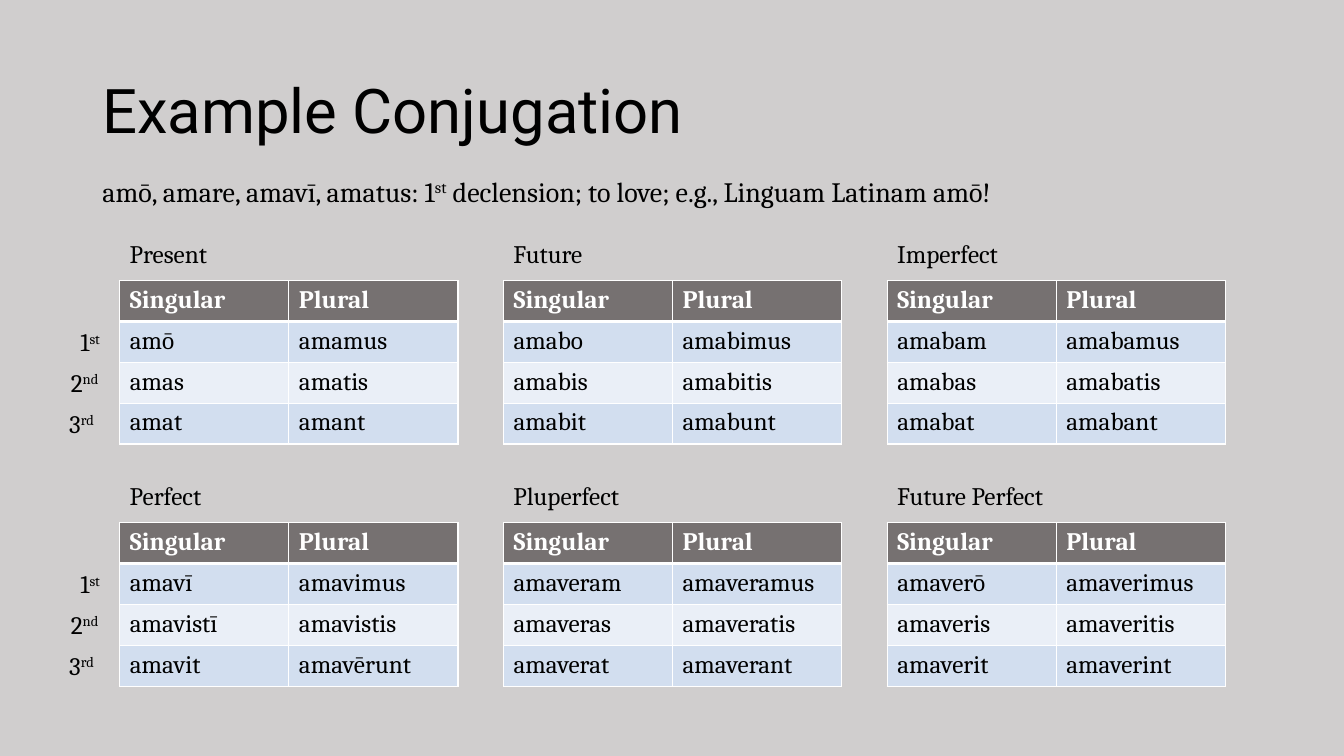
from lxml.etree import SubElement
from pptx import Presentation
from pptx.dml.color import RGBColor
from pptx.enum.shapes import MSO_SHAPE as Shape
from pptx.enum.text import MSO_ANCHOR as Anchor, MSO_AUTO_SIZE as AutoSize, PP_ALIGN as Align
from pptx.oxml.ns import qn
from pptx.util import Cm, Pt

BLACK = RGBColor(0x00, 0x00, 0x00)
WHITE = RGBColor(0xFF, 0xFF, 0xFF)
BACKDROP = RGBColor(0xD0, 0xCE, 0xCE)
HEADER = RGBColor(0x76, 0x71, 0x71)
BAND_DARK = RGBColor(0xD2, 0xDE, 0xEF)
BAND_LIGHT = RGBColor(0xEA, 0xEF, 0xF7)

PAGE_WIDTH, PAGE_HEIGHT = 33.87, 19.05
TABLE_LEFT, TABLE_TOP = 3.02, 7.07
COLUMN_PITCH, ROW_PITCH = 9.67, 6.1
CELL_WIDTH, CELL_HEIGHT = 4.26, 1.03
CAPTION_RISE = 1.18

HEADINGS = ("Singular", "Plural")
TENSES = [
    [
        ("Present", [("amō", "amamus"), ("amas", "amatis"), ("amat", "amant")]),
        ("Future", [("amabo", "amabimus"), ("amabis", "amabitis"), ("amabit", "amabunt")]),
        ("Imperfect", [("amabam", "amabamus"), ("amabas", "amabatis"), ("amabat", "amabant")]),
    ],
    [
        ("Perfect", [("amavī", "amavimus"), ("amavistī", "amavistis"), ("amavit", "amavērunt")]),
        ("Pluperfect", [("amaveram", "amaveramus"), ("amaveras", "amaveratis"),
                        ("amaverat", "amaverant")]),
        ("Future Perfect", [("amaverō", "amaverimus"), ("amaveris", "amaveritis"),
                            ("amaverit", "amaverint")]),
    ],
]
# Number, ordinal ending, box left, right inset
PERSONS = [("1", "st", 1.19, 0.4), ("2", "nd", 1.3, 0.55), ("3", "rd", 1.19, 0.55)]


def write(para, text, *, size=18, font="Cambria", color=BLACK, bold=False, raised=False):
    span = para.add_run()
    span.text = text
    span.font.size = Pt(size)
    span.font.name = font
    span.font.bold = bold
    span.font.color.rgb = color
    if raised:
        span._r.get_or_add_rPr().set("baseline", "30000")


def draw_border(cell, side, points):
    """Put a white line on one side (L, R, T or B) of a table cell."""
    line = SubElement(cell._tc.get_or_add_tcPr(), qn(f"a:ln{side}"), w=str(Pt(points)))
    fill = SubElement(line, qn("a:solidFill"))
    SubElement(fill, qn("a:srgbClr"), val=str(WHITE))


class ConjugationSlide:
    def __init__(self, page):
        self.page = page

    def backdrop(self):
        panel = self.page.shapes.add_shape(Shape.RECTANGLE, 0, 0, Cm(PAGE_WIDTH), Cm(PAGE_HEIGHT))
        panel.shadow.inherit = False
        panel.fill.solid()
        panel.fill.fore_color.rgb = BACKDROP
        panel.line.fill.background()

    def text_box(self, left, top, width, height, *, anchor=Anchor.TOP, grow=True,
                 right_inset=0.25, shapes=None):
        """Add an empty text box and return its first paragraph."""
        box = (shapes or self.page.shapes).add_textbox(Cm(left), Cm(top), Cm(width), Cm(height))
        frame = box.text_frame
        frame.word_wrap = True
        frame.vertical_anchor = anchor
        frame.auto_size = AutoSize.SHAPE_TO_FIT_TEXT if grow else AutoSize.NONE
        frame.margin_right = Cm(right_inset)
        return frame.paragraphs[0]

    def title(self, text):
        para = self.text_box(2.33, 1.01, 29.21, 3.68, anchor=Anchor.MIDDLE, grow=False)
        para.line_spacing = 0.9
        write(para, text, size=44, font="Roboto")

    def principal_parts(self, before, ending, after):
        para = self.text_box(2.33, 4.27, 29.64, 1.11)
        write(para, before, size=20)
        write(para, ending, size=20, raised=True)
        write(para, after, size=20)

    def person_labels(self, table_top):
        group = self.page.shapes.add_group_shape()
        for row, (number, ending, left, inset) in enumerate(PERSONS, start=1):
            para = self.text_box(left, table_top + row * CELL_HEIGHT, 1.73, 1.03,
                                 right_inset=inset, shapes=group.shapes)
            para.alignment = Align.RIGHT
            write(para, number)
            write(para, ending, raised=True)

    def tense(self, name, forms, left, top):
        write(self.text_box(left, top - CAPTION_RISE, 4.55, 1.03), name)
        rows = [HEADINGS, *forms]
        table = self.page.shapes.add_table(
            len(rows), len(HEADINGS), Cm(left), Cm(top),
            Cm(CELL_WIDTH * len(HEADINGS)), Cm(CELL_HEIGHT * len(rows))).table
        for column in table.columns:
            column.width = Cm(CELL_WIDTH)
        for row, words in enumerate(rows):
            table.rows[row].height = Cm(CELL_HEIGHT)
            for column, word in enumerate(words):
                self.cell(table.cell(row, column), word, row)

    def cell(self, cell, word, row):
        is_header = row == 0
        widths = {"L": 1, "R": 1, "T": 3 if row == 1 else 1, "B": 3 if is_header else 1}
        for side, points in widths.items():
            draw_border(cell, side, points)
        cell.fill.solid()
        cell.fill.fore_color.rgb = HEADER if is_header else BAND_DARK if row % 2 else BAND_LIGHT
        write(cell.text_frame.paragraphs[0], word,
              color=WHITE if is_header else BLACK, bold=is_header)


def main():
    deck = Presentation()
    deck.slide_width, deck.slide_height = Cm(PAGE_WIDTH), Cm(PAGE_HEIGHT)
    slide = ConjugationSlide(deck.slides.add_slide(deck.slide_layouts[6]))
    slide.backdrop()
    slide.title("Example Conjugation")
    slide.principal_parts("amō, amare, amavī, amatus: 1", "st",
                          " declension; to love; e.g., Linguam Latinam amō!")
    for line, tenses in enumerate(TENSES):
        top = TABLE_TOP + line * ROW_PITCH
        slide.person_labels(top)
        for column, (name, forms) in enumerate(tenses):
            slide.tense(name, forms, TABLE_LEFT + column * COLUMN_PITCH, top)
    deck.save("out.pptx")


if __name__ == "__main__":
    main()
